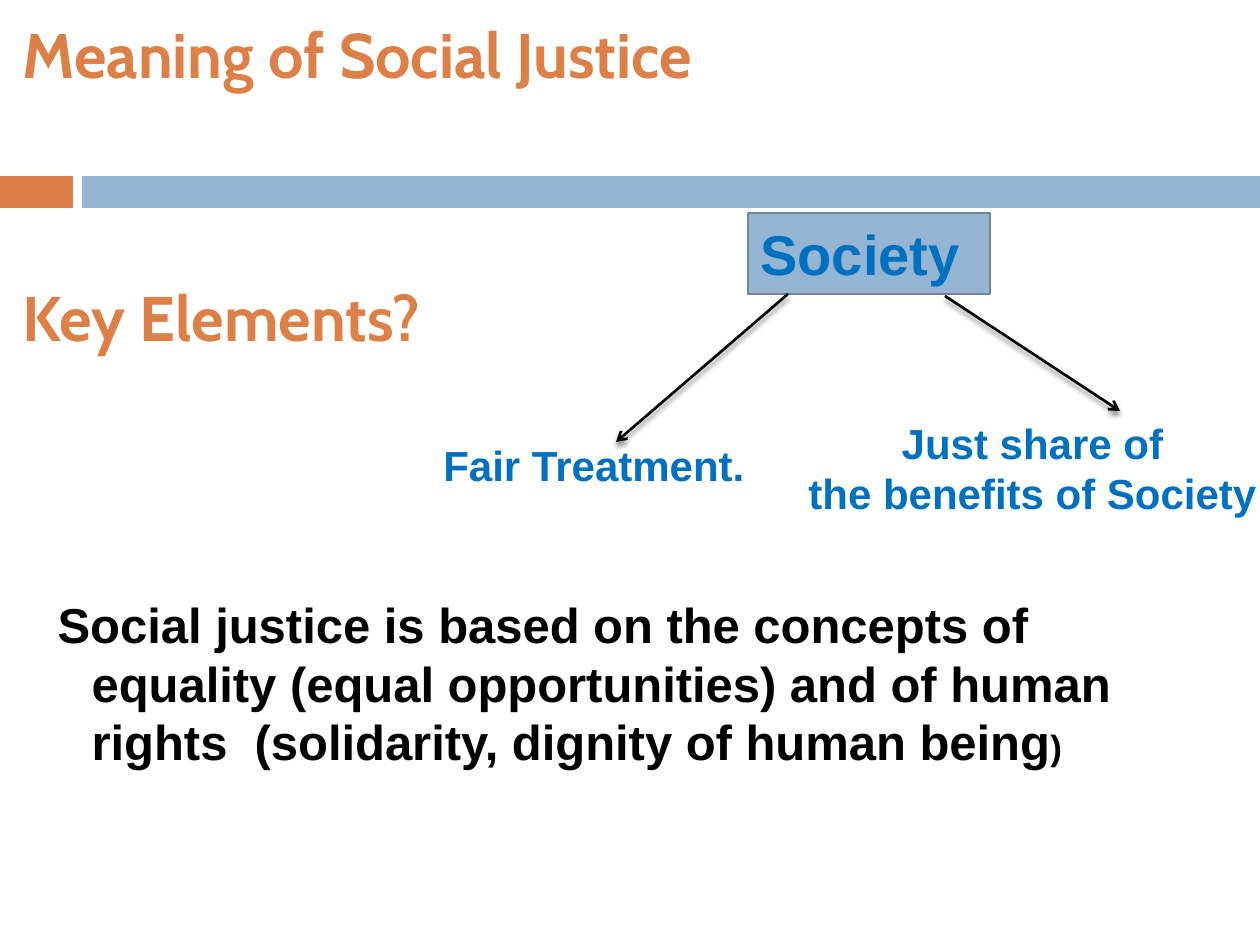
from lxml import etree
from pptx import Presentation
from pptx.dml.color import RGBColor
from pptx.enum.shapes import MSO_CONNECTOR, MSO_SHAPE
from pptx.enum.text import MSO_ANCHOR, MSO_AUTO_SIZE, PP_ALIGN
from pptx.oxml import parse_xml
from pptx.oxml.ns import nsdecls, qn
from pptx.util import Emu, Pt

PX = 914400 / 126
COLORS = {
    "orange": "DD8047", "blue": "94B6D2", "edge": "6D879B",
    "label": "0070C0", "black": "000000",
}

# Each paragraph is a list of (text, size) runs.
HEADINGS = [[("Meaning of Social Justice", 36)], [("Key Elements?", 36)]]
STATEMENT = [[
    ("Social justice is based on the concepts of equality (equal opportunities) "
     "and of human rights  (solidarity, dignity of human being", 28),
    (")", 20),
]]
SOCIETY = [[("Society", 32)]]
BARS = [((0, 176, 73, 32), "orange"), ((82, 176, 1178, 32), "blue")]
ELEMENTS = [
    ((431, 433, 329, 63), [[("Fair Treatment.", 24)]], PP_ALIGN.LEFT),
    ((794, 411, 477, 115),
     [[("Just share of", 24)], [("the benefits of Society", 24)]], PP_ALIGN.CENTER),
]
ARROWS = [(788, 294, 616, 442), (945, 296, 1120, 411)]


def px(value):
    return Emu(round(value * PX))


def rgb(name):
    return RGBColor.from_string(COLORS[name])


def place(shape, box):
    shape.left, shape.top, shape.width, shape.height = map(px, box)


def write(shape, paragraphs, color, font="Arial", align=PP_ALIGN.LEFT,
          before=(), wrap=False, anchor=MSO_ANCHOR.TOP):
    frame = shape.text_frame
    frame.word_wrap = wrap
    frame.auto_size = MSO_AUTO_SIZE.NONE
    frame.vertical_anchor = anchor
    for index, runs in enumerate(paragraphs):
        para = frame.add_paragraph() if index else frame.paragraphs[0]
        para.alignment = align
        if before:
            para.space_before = Pt(before[index])
        for text, size in runs:
            run = para.add_run()
            run.text = text
            run.font.name = font
            run.font.size = Pt(size)
            run.font.bold = True
            run.font.color.rgb = rgb(color)


def add_box(slide, box, fill, edge=None):
    shape = slide.shapes.add_shape(MSO_SHAPE.RECTANGLE, *map(px, box))
    shape.shadow.inherit = False
    shape.fill.solid()
    shape.fill.fore_color.rgb = rgb(fill)
    if edge:
        shape.line.color.rgb = rgb(edge)
        shape.line.width = Pt(1.5)
    else:
        shape.line.fill.background()
    return shape


def add_arrow(slide, ends):
    arrow = slide.shapes.add_connector(MSO_CONNECTOR.STRAIGHT, *map(px, ends))
    arrow.line.color.rgb = rgb("black")
    arrow.line.width = Pt(1.5)
    etree.SubElement(arrow.line._get_or_add_ln(), qn("a:tailEnd"), type="arrow")
    arrow._element.spPr.append(parse_xml(
        f'<a:effectLst {nsdecls("a")}>'
        f'<a:outerShdw blurRad="{Pt(3)}" dist="{Pt(2.4)}" dir="5400000" rotWithShape="0">'
        f'<a:srgbClr val="{COLORS["black"]}"><a:alpha val="45000"/></a:srgbClr>'
        '</a:outerShdw></a:effectLst>'))


def hang_first_line(para, margin, indent):
    """Indent the wrapped lines and drop the bullet."""
    props = para._p.get_or_add_pPr()
    props.set("marL", str(px(margin)))
    props.set("indent", str(px(indent)))
    etree.SubElement(props, qn("a:buNone"))


def main():
    deck = Presentation()
    deck.slide_width, deck.slide_height = px(1260), px(945)
    slide = deck.slides.add_slide(deck.slide_layouts[1])

    for box, fill in BARS:
        add_box(slide, box, fill)

    headings, statement = slide.placeholders
    place(headings, (10, 9, 1250, 160))
    write(headings, HEADINGS, "orange", font="Cabin", before=(7, 107), wrap=True)
    place(statement, (35, 588, 1197, 243))
    write(statement, STATEMENT, "black", before=(7,), wrap=True)
    hang_first_line(statement.text_frame.paragraphs[0], 44, -34)

    for box, lines, align in ELEMENTS:
        write(slide.shapes.add_textbox(*map(px, box)), lines, "label", align=align)

    society = add_box(slide, (748, 213, 242, 81), "blue", edge="edge")
    write(society, SOCIETY, "label", wrap=True, anchor=MSO_ANCHOR.MIDDLE)
    for ends in ARROWS:
        add_arrow(slide, ends)

    deck.save("out.pptx")


if __name__ == "__main__":
    main()
